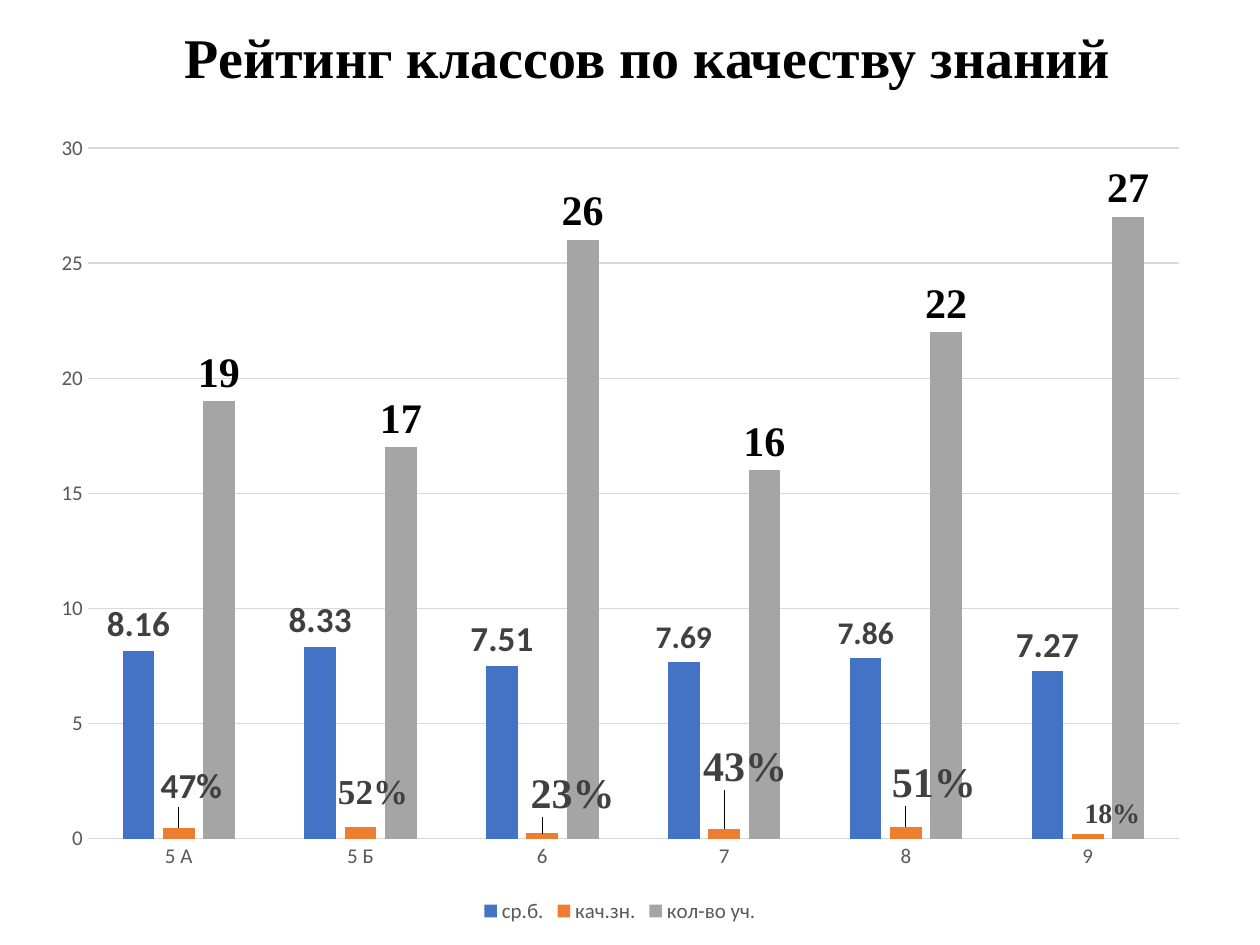
from dataclasses import dataclass

from lxml import etree
from pptx import Presentation
from pptx.chart.data import CategoryChartData
from pptx.dml.color import RGBColor
from pptx.enum.chart import XL_CHART_TYPE, XL_LABEL_POSITION, XL_LEGEND_POSITION, XL_TICK_MARK
from pptx.enum.text import MSO_AUTO_SIZE
from pptx.oxml.ns import qn
from pptx.util import Pt

COLUMNS = XL_CHART_TYPE.COLUMN_CLUSTERED
OUTSIDE_END = XL_LABEL_POSITION.OUTSIDE_END
BOTTOM = XL_LEGEND_POSITION.BOTTOM
NO_TICK = XL_TICK_MARK.NONE
GROW = MSO_AUTO_SIZE.SHAPE_TO_FIT_TEXT

SANS = "Calibri"
SERIF = "Times New Roman"
BLACK = "000000"
LABEL_GREY = "404040"
AXIS_GREY = "595959"
GRID_GREY = "D9D9D9"
CLASSES = ["5 А", "5 Б", "6", "7", "8", "9"]
CHART_WIDTH, CHART_HEIGHT = 665.3, 462.2


@dataclass
class Label:
    """Font of one data label and its shift, in points, from the column end."""
    size: float
    font: str = SANS
    shift: tuple[float, float] = (0, 0)


@dataclass
class Measure:
    name: str
    values: list[float]
    color: str
    label_color: str
    base_size: float
    labels: list[Label]
    number_format: str = "General"

    def label_text(self, value: float) -> str:
        return f"{value:.0%}" if self.number_format == "0%" else f"{value}"


MEASURES = [
    Measure("ср.б.", [8.16, 8.33, 7.51, 7.69, 7.86, 7.27], "4472C4", LABEL_GREY, 14,
            [Label(size) for size in (20, 20, 20, 18, 18, 20)]),
    Measure("кач.зн.", [0.47, 0.52, 0.23, 0.43, 0.51, 0.18], "ED7D31", LABEL_GREY, 12,
            [Label(20, SANS, (7, -9)), Label(20, SERIF, (7, -5)),
             Label(24, SERIF, (17, -6)), Label(24, SERIF, (12, -19)),
             Label(24, SERIF, (16, -9)), Label(16, SERIF, (14, 0))], "0%"),
    Measure("кол-во уч.", [19, 17, 26, 16, 22, 27], "A5A5A5", BLACK, 12,
            [Label(24, SERIF)] * len(CLASSES)),
]


def rgb(color: str) -> RGBColor:
    return RGBColor.from_string(color)


def set_attributes(target, values: dict) -> None:
    for name, value in values.items():
        setattr(target, name, value)


def format_font(font, size: float, color: str, name: str = SANS, bold: bool = False) -> None:
    set_attributes(font, {"size": Pt(size), "name": name, "bold": bold})
    font.color.rgb = rgb(color)


def format_line(line, color: str, width: float = 0.75) -> None:
    line.color.rgb = rgb(color)
    line.width = Pt(width)


def manual_layout(values: dict[str, str | float]):
    layout = etree.Element(qn("c:layout"))
    manual = etree.SubElement(layout, qn("c:manualLayout"))
    for name, value in values.items():
        etree.SubElement(manual, qn(f"c:{name}")).set("val", str(value))
    return layout


def add_title(slide, text: str) -> None:
    box = slide.shapes.add_textbox(Pt(98.6), Pt(9.4), Pt(621.4), Pt(46.1))
    set_attributes(box.text_frame, {"word_wrap": True, "auto_size": GROW})
    run = box.text_frame.paragraphs[0].add_run()
    run.text = text
    format_font(run.font, 32, BLACK, SERIF, True)


def format_series(series, measure: Measure) -> None:
    series.format.fill.solid()
    series.format.fill.fore_color.rgb = rgb(measure.color)
    series.invert_if_negative = False
    set_attributes(series.data_labels, {
        "show_value": True, "position": OUTSIDE_END,
        "number_format": measure.number_format, "number_format_is_linked": False})
    format_font(series.data_labels.font, measure.base_size, LABEL_GREY)

    for index, (value, label) in enumerate(zip(measure.values, measure.labels)):
        data_label = series.points[index].data_label
        run = data_label.text_frame.paragraphs[0].add_run()
        run.text = measure.label_text(value)
        format_font(run.font, label.size, measure.label_color, label.font, True)
        data_label.position = OUTSIDE_END
        if any(label.shift):
            right, down = label.shift
            element = series._element.xpath("c:dLbls/c:dLbl")[index]
            element.insert(1, manual_layout({
                "x": round(right / CHART_WIDTH, 3), "y": round(down / CHART_HEIGHT, 3)}))


def format_axes(chart) -> None:
    for axis in (chart.category_axis, chart.value_axis):
        set_attributes(axis, {"major_tick_mark": NO_TICK, "minor_tick_mark": NO_TICK})
        format_font(axis.tick_labels.font, 12, AXIS_GREY)
    format_line(chart.category_axis.format.line, GRID_GREY)
    value_axis = chart.value_axis
    set_attributes(value_axis, {"minimum_scale": 0, "maximum_scale": 30, "major_unit": 5})
    value_axis.format.line.fill.background()
    format_line(value_axis.major_gridlines.format.line, GRID_GREY)


def place_plot(chart) -> None:
    plot_area = chart._chartSpace.xpath("c:chart/c:plotArea")[0]
    for layout in plot_area.findall(qn("c:layout")):
        plot_area.remove(layout)
    plot_area.insert(0, manual_layout({
        "layoutTarget": "inner", "xMode": "edge", "yMode": "edge",
        "x": 0.043, "y": 0.035, "w": 0.937, "h": 0.854}))


def add_rating_chart(slide) -> None:
    data = CategoryChartData()
    data.categories = CLASSES
    for measure in MEASURES:
        data.add_series(measure.name, measure.values, measure.number_format)
    chart = slide.shapes.add_chart(
        COLUMNS, Pt(21.6), Pt(68.4), Pt(CHART_WIDTH), Pt(CHART_HEIGHT), data).chart
    set_attributes(chart, {"has_title": False, "has_legend": True})
    format_font(chart.font, 10, BLACK)
    set_attributes(chart.legend, {"position": BOTTOM, "include_in_layout": False})
    format_font(chart.legend.font, 12, AXIS_GREY)
    plot = chart.plots[0]
    set_attributes(plot, {"gap_width": 219, "overlap": -27, "vary_by_categories": False})
    for series, measure in zip(plot.series, MEASURES):
        format_series(series, measure)
    format_axes(chart)
    place_plot(chart)


def main() -> None:
    presentation = Presentation()
    set_attributes(presentation, {"slide_width": Pt(720), "slide_height": Pt(540)})
    slide = presentation.slides.add_slide(presentation.slide_layouts[6])
    add_title(slide, "Рейтинг классов по качеству знаний")
    add_rating_chart(slide)
    presentation.save("out.pptx")


if __name__ == "__main__":
    main()
